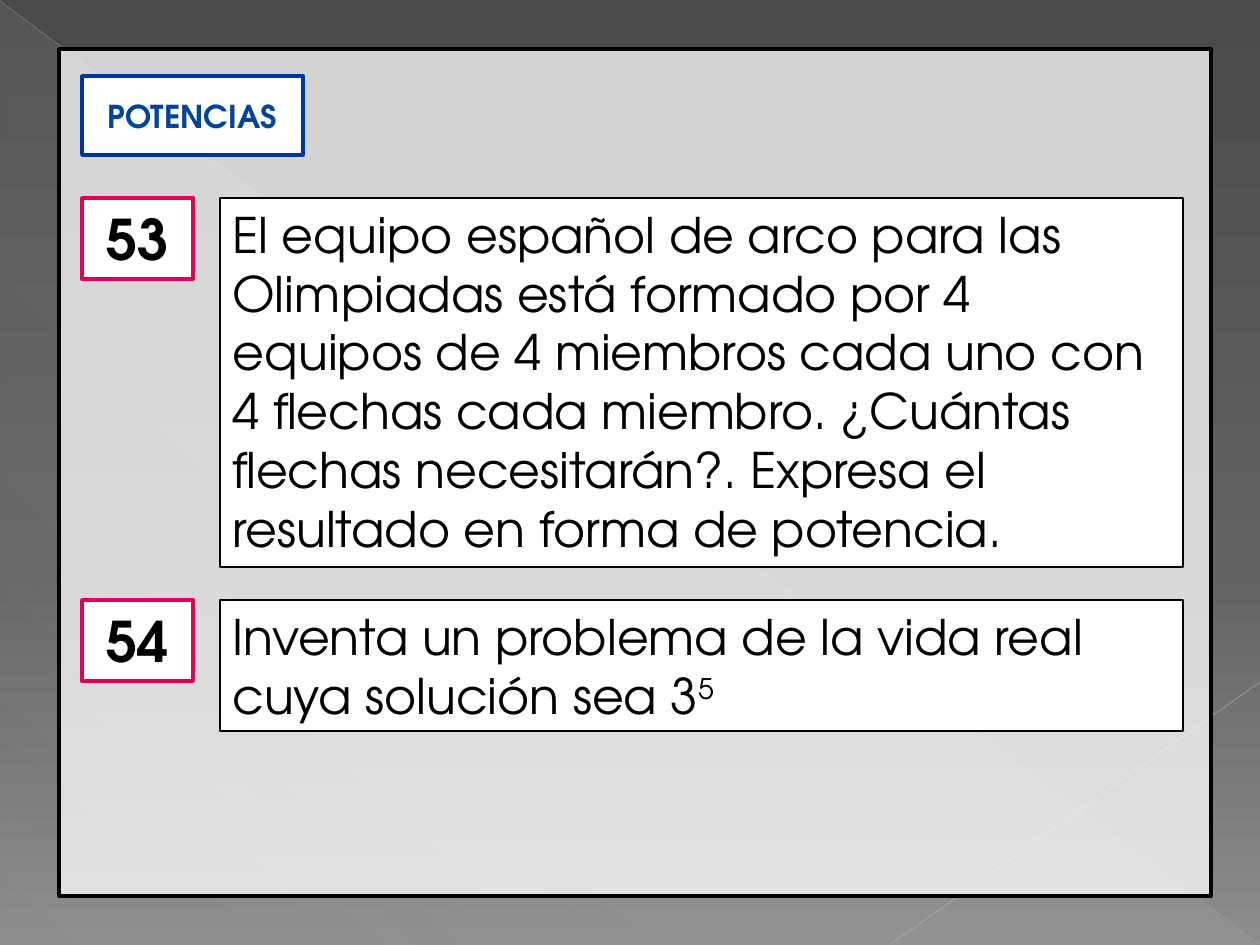
from dataclasses import dataclass

from lxml.etree import SubElement
from pptx import Presentation
from pptx.dml.color import RGBColor
from pptx.enum.shapes import MSO_CONNECTOR as Connector, MSO_SHAPE as Preset
from pptx.enum.text import MSO_ANCHOR as Anchor, MSO_AUTO_SIZE as AutoSize, PP_ALIGN as Align
from pptx.oxml.ns import qn
from pptx.util import Emu, Pt

PX_PER_INCH = 126


@dataclass(frozen=True)
class Theme:
    font: str = "TeX Gyre Adventor"
    white: str = "FFFFFF"
    black: str = "000000"
    pink: str = "E40059"
    title_border: str = "00349E"
    title_text: str = "00449E"
    title_size: int = 18
    number_size: int = 32
    body_size: int = 28
    thick: float = 2
    thin: float = 0.75


@dataclass(frozen=True)
class Stop:
    position: int
    color: str
    opacity: int = 100


@dataclass(frozen=True)
class Ray:
    start: tuple[int, int]
    end: tuple[int, int]
    color: str
    width: float
    opacity: int


@dataclass(frozen=True)
class Exercise:
    number: str
    text: str
    top: int
    height: int
    exponent: str = ""


THEME = Theme()
BACKGROUND = [Stop(0, "4A4A4A"), Stop(60, "626262"), Stop(100, "8C8C8C")]
SHEEN = [Stop(0, "D2D2D2", 10), Stop(70, "D2D2D2", 8), Stop(100, "D2D2D2", 1)]
RAYS = [
    Ray((0, 1), (1259, 944), "BFBFBF", 0.39, 35),
    Ray((1260, 682), (891, 944), "C6C6C6", 0.47, 45),
]
EXERCISES = [
    Exercise(
        "53",
        "El equipo español de arco para las Olimpiadas está formado por 4 equipos "
        "de 4 miembros cada uno con 4 flechas cada miembro. ¿Cuántas flechas "
        "necesitarán?. Expresa el resultado en forma de potencia.",
        198, 369,
    ),
    Exercise("54", "Inventa un problema de la vida real cuya solución sea 3", 600, 131, "5"),
]


def px(value: int) -> Emu:
    return Emu(round(value * 914400 / PX_PER_INCH))


def set_opacity(parent, percent: int) -> None:
    for color in parent.iter(qn("a:srgbClr")):
        SubElement(color, qn("a:alpha"), val=str(percent * 1000))


def set_gradient(fill, properties, stops: list[Stop], clockwise: int) -> None:
    fill.gradient()
    fill.gradient_angle = 360 - clockwise
    stop_list = next(properties.iter(qn("a:gsLst")))
    for old in list(stop_list):
        stop_list.remove(old)
    for stop in stops:
        entry = SubElement(stop_list, qn("a:gs"), pos=str(stop.position * 1000))
        SubElement(entry, qn("a:srgbClr"), val=stop.color)
        if stop.opacity < 100:
            set_opacity(entry, stop.opacity)


def style_box(box, border: str, width: float) -> None:
    box.fill.solid()
    box.fill.fore_color.rgb = RGBColor.from_string(THEME.white)
    box.line.color.rgb = RGBColor.from_string(border)
    box.line.width = Pt(width)


def add_preset(page, preset, left: int, top: int, width: int, height: int):
    shape = page.shapes.add_shape(preset, px(left), px(top), px(width), px(height))
    shape.shadow.inherit = False
    return shape


def write(box, text: str, size: int, color: str, align, bold: bool = False):
    para = box.text_frame.paragraphs[0]
    para.add_run().text = text
    para.alignment = align
    para.font.name = THEME.font
    para.font.size = Pt(size)
    para.font.bold = bold
    para.font.color.rgb = RGBColor.from_string(color)
    return para


def add_ray(page, ray: Ray) -> None:
    points = [px(value) for value in ray.start + ray.end]
    line = page.shapes.add_connector(Connector.STRAIGHT, *points)
    line.line.color.rgb = RGBColor.from_string(ray.color)
    line.line.width = Pt(ray.width)
    properties = line._element.spPr
    set_opacity(properties, ray.opacity)
    SubElement(properties, qn("a:effectLst"))


def add_text_box(page, left: int, top: int, width: int, height: int, border: str, thickness: float):
    box = add_preset(page, Preset.RECTANGLE, left, top, width, height)
    style_box(box, border, thickness)
    frame = box.text_frame
    frame.word_wrap = True
    frame.vertical_anchor = Anchor.TOP
    frame.auto_size = AutoSize.SHAPE_TO_FIT_TEXT
    return box


def add_exercise(page, exercise: Exercise) -> None:
    badge = add_text_box(page, 82, exercise.top, 111, 81, THEME.pink, THEME.thick)
    write(badge, exercise.number, THEME.number_size, THEME.black, Align.CENTER, bold=True)
    statement = add_text_box(page, 220, exercise.top, 963, exercise.height, THEME.black, THEME.thin)
    para = write(statement, exercise.text, THEME.body_size, THEME.black, Align.LEFT)
    if exercise.exponent:
        span = para.add_run()
        span.text = exercise.exponent
        span._r.get_or_add_rPr().set("baseline", "30000")


def place_title(page, text: str) -> None:
    title = page.shapes.title
    title.left, title.top, title.width, title.height = (px(v) for v in (82, 76, 221, 79))
    geometry = SubElement(title._element.spPr, qn("a:prstGeom"), prst="roundRect")
    SubElement(geometry, qn("a:avLst"))
    style_box(title, THEME.title_border, THEME.thick)
    title.text_frame.word_wrap = True
    title.text_frame.auto_size = AutoSize.NONE
    title.text_frame.vertical_anchor = Anchor.MIDDLE
    write(title, text, THEME.title_size, THEME.title_text, Align.CENTER, bold=True)
    # Bring the title in front of the panel
    page.shapes._spTree.append(title._element)


def main() -> None:
    deck = Presentation()
    deck.slide_width, deck.slide_height = px(1260), px(945)
    page = deck.slides.add_slide(deck.slide_layouts[5])

    # Backdrop
    set_gradient(page.background.fill, page._element, BACKGROUND, 90)
    sheen = add_preset(page, Preset.RIGHT_TRIANGLE, 1, 2, 1257, 942)
    set_gradient(sheen.fill, sheen._element.spPr, SHEEN, 133)
    sheen.line.fill.background()
    for ray in RAYS:
        add_ray(page, ray)

    # Translucent panel
    panel = add_preset(page, Preset.RECTANGLE, 59, 49, 1152, 847)
    style_box(panel, THEME.black, THEME.thick)
    set_opacity(panel._element.spPr.find(qn("a:solidFill")), 75)

    # Title and exercises
    place_title(page, "POTENCIAS")
    for exercise in EXERCISES:
        add_exercise(page, exercise)

    deck.save("out.pptx")


if __name__ == "__main__":
    main()
